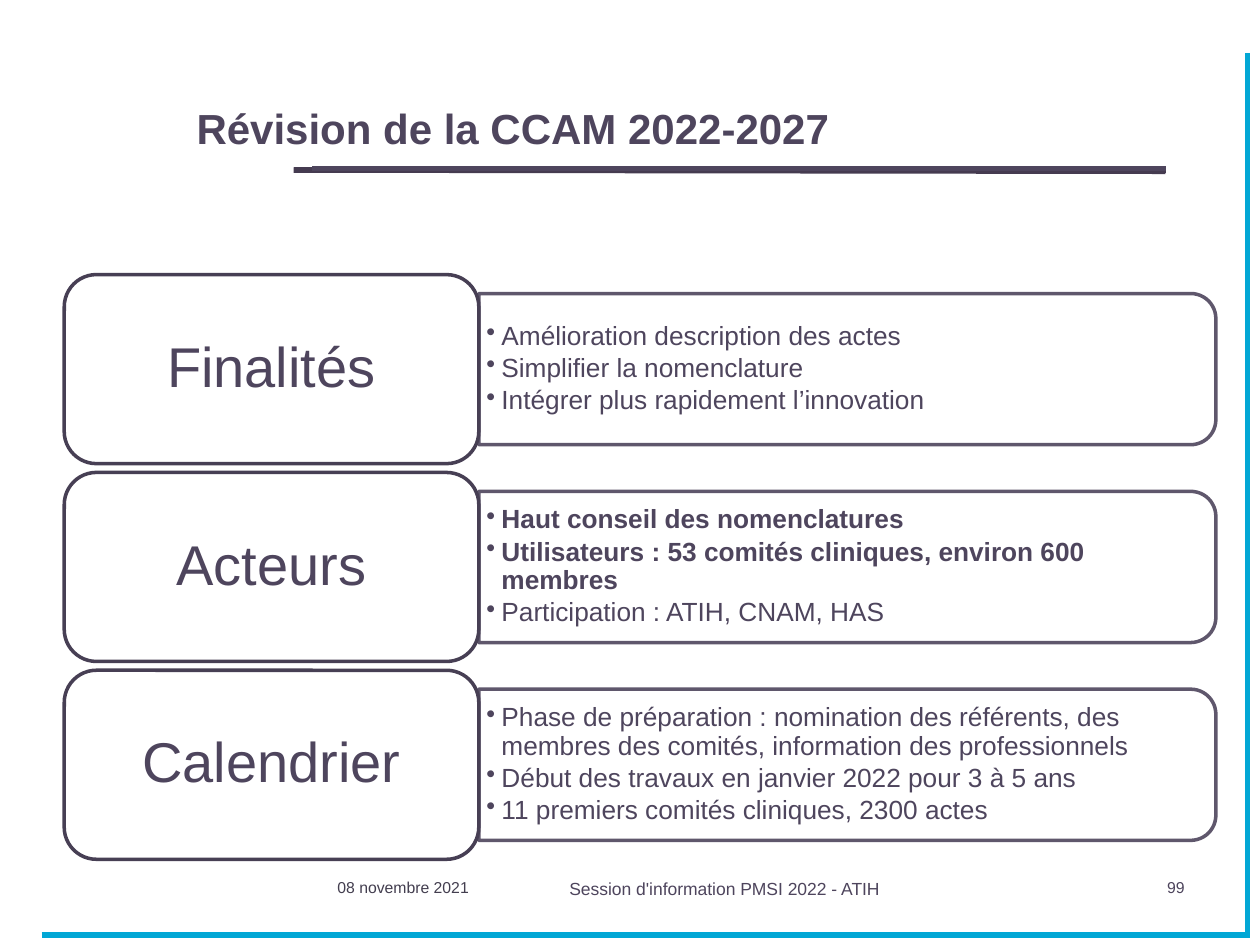
from math import cos, pi, sin

from lxml import etree
from pptx import Presentation
from pptx.dml.color import RGBColor
from pptx.enum.shapes import MSO_CONNECTOR, MSO_SHAPE
from pptx.enum.text import MSO_ANCHOR, PP_ALIGN
from pptx.oxml.ns import qn
from pptx.util import Emu, Pt

PX = 9144  # 100 px to the inch
LEFT, CENTER, RIGHT = PP_ALIGN.LEFT, PP_ALIGN.CENTER, PP_ALIGN.RIGHT
TOP, MIDDLE, BOTTOM = MSO_ANCHOR.TOP, MSO_ANCHOR.MIDDLE, MSO_ANCHOR.BOTTOM
STRAIGHT, ROUNDED = MSO_CONNECTOR.STRAIGHT, MSO_SHAPE.ROUNDED_RECTANGLE
INK, CARD_EDGE, RULE, BLUE, DATE_INK = "4E455D", "473F54", "453B50", "02A7D5", "433E4F"

# Heading and its (text, bold) points
TOPICS = [
    ("Finalités", [("Amélioration description des actes", False),
                   ("Simplifier la nomenclature", False),
                   ("Intégrer plus rapidement l’innovation", False)]),
    ("Acteurs", [("Haut conseil des nomenclatures", True),
                 ("Utilisateurs : 53 comités cliniques, environ 600 membres", True),
                 ("Participation : ATIH, CNAM, HAS", False)]),
    ("Calendrier", [("Phase de préparation : nomination des référents, des membres "
                     "des comités, information des professionnels", False),
                    ("Début des travaux en janvier 2022 pour 3 à 5 ans", False),
                    ("11 premiers comités cliniques, 2300 actes", False)]),
]


def px(*lengths):
    return [Emu(length * PX) for length in lengths]


def color(hex_string):
    return RGBColor.from_string(hex_string)


def set_frame(frame, insets=(10, 5, 10, 5), anchor=TOP):
    frame.word_wrap = True
    frame.vertical_anchor = anchor
    (frame.margin_left, frame.margin_top,
     frame.margin_right, frame.margin_bottom) = px(*insets)


def write(paragraph, text, size, ink=INK, bold=False, align=LEFT,
          spacing=None, after=None, bullet=False):
    paragraph.alignment = align
    if spacing:
        paragraph.line_spacing = spacing
    if after:
        paragraph.space_after = Pt(after)
    if bullet:
        properties = paragraph._p.get_or_add_pPr()
        properties.set("marL", str(12 * PX))
        properties.set("indent", str(-12 * PX))
        etree.SubElement(properties, qn("a:buChar")).set("char", "•")
    run = paragraph.add_run()
    run.text = text
    run.font.name, run.font.size, run.font.bold = "Arial", Pt(size), bold
    run.font.color.rgb = color(ink)


def style_box(shape, edge, opacity=None):
    shape.shadow.inherit = False
    shape.fill.solid()
    shape.fill.fore_color.rgb = color("FFFFFF")
    shape.line.color.rgb = color(edge)
    shape.line.width = Pt(2)
    if opacity:
        for tone in shape._element.spPr.iter(qn("a:srgbClr")):
            etree.SubElement(tone, qn("a:alpha")).set("val", str(opacity * 1000))


def add_rule(slide, x1, y1, x2, y2, ink):
    rule = slide.shapes.add_connector(STRAIGHT, *px(x1, y1, x2, y2))
    rule.line.color.rgb = color(ink)
    rule.line.width = Pt(3.06)
    etree.SubElement(rule._element.spPr, qn("a:effectLst"))


def add_frame_rules(slide):
    add_rule(slide, 233, 135, 925, 136, RULE)
    add_rule(slide, 233, 135, 925, 135, RULE)
    add_rule(slide, 33, 742, 992, 742, BLUE)
    add_rule(slide, 990, 742, 990, 42, BLUE)
    add_rule(slide, 248, 134, 925, 134, INK)


def add_title(slide, left, top, width, height):
    title = slide.shapes.title
    title.left, title.top, title.width, title.height = px(left, top, width, height)
    set_frame(title.text_frame, anchor=BOTTOM)
    write(title.text_frame.paragraphs[0], "Révision de la CCAM 2022-2027", 24, bold=True)


def add_panel(slide, left, top, width, height, points):
    """Box with rounded right corners that holds the bulleted points."""
    radius, steps = 20, 12
    right, bottom = left + width, top + height
    outline = [(left, top)]
    for center_y, start in ((top + radius, -pi / 2), (bottom - radius, 0)):
        for step in range(steps + 1):
            angle = start + step * pi / 2 / steps
            outline.append((right - radius + radius * cos(angle),
                            center_y + radius * sin(angle)))
    outline.append((left, bottom))
    corners = [(round(x * PX), round(y * PX)) for x, y in outline]
    builder = slide.shapes.build_freeform(*corners[0])
    builder.add_line_segments(corners[1:], close=True)
    panel = builder.convert_to_shape()
    style_box(panel, INK, opacity=90)

    frame = panel.text_frame
    set_frame(frame, (6, 9, 12, 9), MIDDLE)
    for index, (text, bold) in enumerate(points):
        paragraph = frame.add_paragraph() if index else frame.paragraphs[0]
        write(paragraph, text, 15, bold=bold, spacing=0.9, after=2.25, bullet=True)


def add_card(slide, left, top, width, height, heading):
    card = slide.shapes.add_shape(ROUNDED, *px(left, top, width, height))
    card.adjustments[0] = 0.17
    style_box(card, CARD_EDGE)
    set_frame(card.text_frame, (24, 16, 24, 16), MIDDLE)
    write(card.text_frame.paragraphs[0], heading, 32, align=CENTER,
          spacing=0.9, after=11.2)


def add_topic(slide, left, top, width, height, heading, points):
    card_width, inset = 329, 15
    add_panel(slide, left + card_width, top + inset, width - card_width,
              height - 2 * inset, points)
    add_card(slide, left, top, card_width, height, heading)


def add_label(slide, left, top, width, height, text, size, **text_format):
    label = slide.shapes.add_textbox(*px(left, top, width, height))
    set_frame(label.text_frame)
    write(label.text_frame.paragraphs[0], text, size, **text_format)


def add_footer(slide, top):
    add_label(slide, 258, top, 167, 50, "08 novembre 2021", 9, ink=DATE_INK)
    add_label(slide, 442, top, 317, 50, "Session d'information PMSI 2022 - ATIH", 10)
    add_label(slide, 767, top, 183, 44, "99", 9, align=RIGHT)


def main():
    deck = Presentation()
    deck.slide_width, deck.slide_height = px(1000, 750)
    slide = deck.slides.add_slide(deck.slide_layouts[5])
    add_frame_rules(slide)
    add_title(slide, 146, 45, 766, 81)
    for row, (heading, points) in enumerate(TOPICS):
        add_topic(slide, 51, 218 + 157 * row, 914, 150, heading, points)
    add_footer(slide, 692)
    deck.save("out.pptx")


if __name__ == "__main__":
    main()
